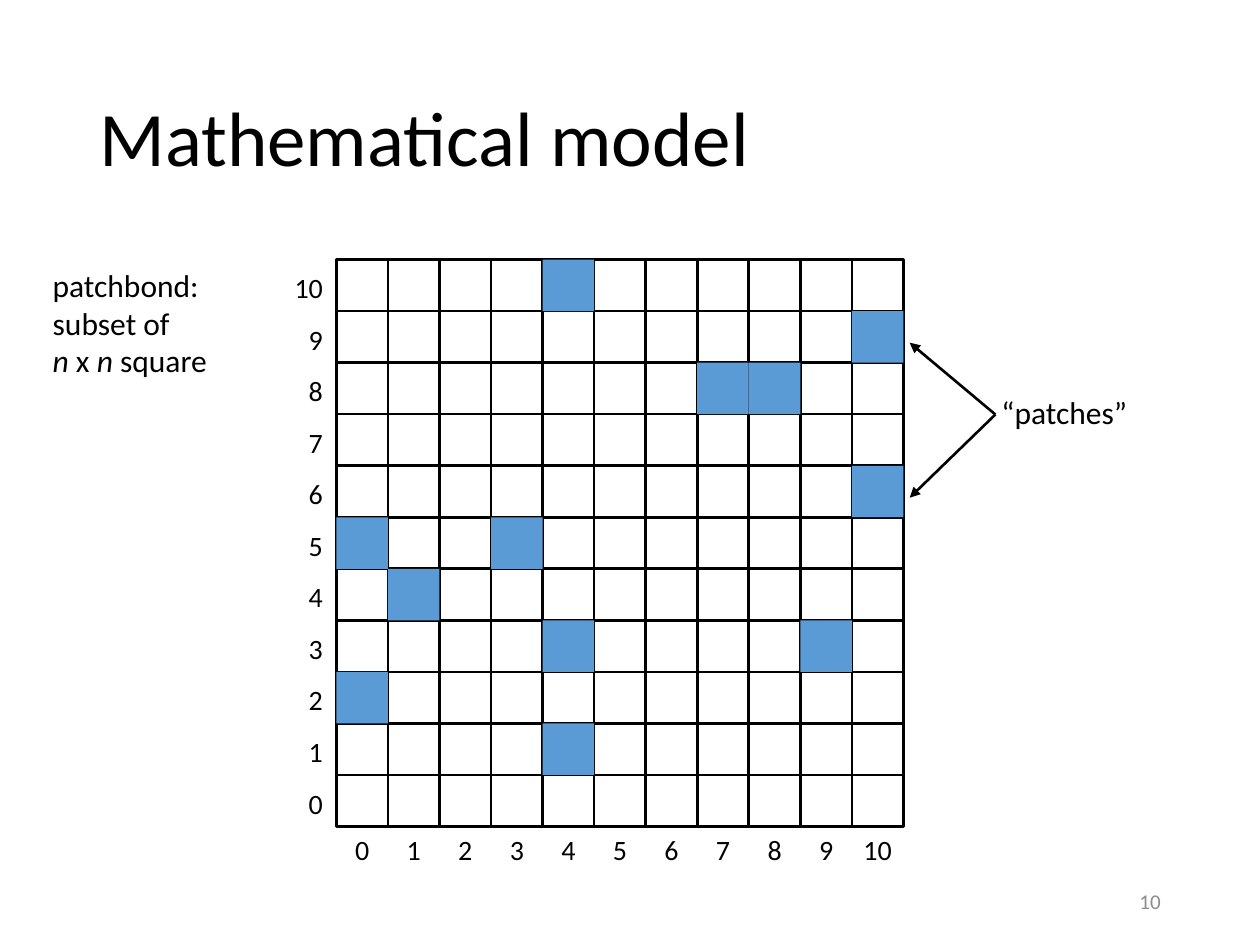
from lxml import etree
from pptx import Presentation
from pptx.dml.color import RGBColor
from pptx.enum.shapes import MSO_CONNECTOR, MSO_SHAPE
from pptx.enum.text import MSO_ANCHOR, PP_ALIGN
from pptx.oxml.ns import qn
from pptx.util import Inches, Pt

STRAIGHT = MSO_CONNECTOR.STRAIGHT
RECTANGLE = MSO_SHAPE.RECTANGLE
TOP, MIDDLE = MSO_ANCHOR.TOP, MSO_ANCHOR.MIDDLE
LEFT, CENTER, RIGHT = PP_ALIGN.LEFT, PP_ALIGN.CENTER, PP_ALIGN.RIGHT

COLORS = {"ink": "000000", "paper": "FFFFFF", "patch": "5B9BD5", "number": "8C8C8C"}

COUNT = 11
SIDE = 4.5
CELL = SIDE / COUNT
GRID_LEFT, GRID_TOP = 2.67, 2.06
GRID_RIGHT, GRID_BOTTOM = GRID_LEFT + SIDE, GRID_TOP + SIDE
LABEL_HEIGHT = 0.37

# (column, row), with rows counted upwards
PATCHES = [(0, 2), (1, 4), (0, 5), (3, 5), (4, 3), (4, 1),
           (4, 10), (7, 8), (8, 8), (9, 3), (10, 9), (10, 6)]


class SlideBuilder:
    """Adds elements in one style to the current slide."""

    font_name = "Calibri"
    line_width = Pt(1.5)

    def __init__(self, slide):
        self.slide = slide

    def format_runs(self, para, size, color):
        for span in para.runs:
            span.font.name = self.font_name
            span.font.size = Pt(size)
            span.font.color.rgb = RGBColor.from_string(COLORS[color])

    def title(self, text, left, top, width, height):
        box = self.slide.shapes.title
        box.left, box.top = Inches(left), Inches(top)
        box.width, box.height = Inches(width), Inches(height)
        box.text_frame.text = text
        box.text_frame.vertical_anchor = MIDDLE
        para = box.text_frame.paragraphs[0]
        para.alignment = LEFT
        para.line_spacing = 0.9
        self.format_runs(para, 44, "ink")

    def text(self, paragraphs, left, top, width, height, size=18, color="ink",
             align=LEFT, anchor=TOP, margins=(0.1, 0.1)):
        """Each paragraph is a list of spans; a span is (text, italic)."""
        box = self.slide.shapes.add_textbox(
            Inches(left), Inches(top), Inches(width), Inches(height))
        frame = box.text_frame
        frame.word_wrap = True
        frame.vertical_anchor = anchor
        frame.margin_left, frame.margin_right = map(Inches, margins)
        for index, spans in enumerate(paragraphs):
            para = frame.add_paragraph() if index else frame.paragraphs[0]
            para.alignment = align
            for words, italic in spans:
                span = para.add_run()
                span.text = words
                span.font.italic = italic
            self.format_runs(para, size, color)

    def label(self, words, *place, **style):
        self.text([[(words, False)]], *place, **style)

    def square(self, left, top, side, fill, outlined=False):
        shape = self.slide.shapes.add_shape(
            RECTANGLE, Inches(left), Inches(top), Inches(side), Inches(side))
        shape.shadow.inherit = False
        shape.fill.solid()
        shape.fill.fore_color.rgb = RGBColor.from_string(COLORS[fill])
        if outlined:
            shape.line.color.rgb = RGBColor.from_string(COLORS["ink"])
            shape.line.width = self.line_width
        else:
            shape.line.fill.background()

    def line(self, start, end, arrow=False):
        connector = self.slide.shapes.add_connector(
            STRAIGHT, *map(Inches, start + end))
        connector.line.color.rgb = RGBColor.from_string(COLORS["ink"])
        connector.line.width = self.line_width
        if arrow:
            stroke = connector.line._get_or_add_ln()
            etree.SubElement(stroke, qn("a:tailEnd"), type="triangle")
        etree.SubElement(connector._element.spPr, qn("a:effectLst"))


def draw_grid(builder):
    builder.square(GRID_LEFT, GRID_TOP, SIDE, "paper", outlined=True)
    for index in range(1, COUNT):
        x, y = GRID_LEFT + index * CELL, GRID_TOP + index * CELL
        builder.line((x, GRID_TOP), (x, GRID_BOTTOM))
        builder.line((GRID_LEFT, y), (GRID_RIGHT, y))


def draw_axis_labels(builder):
    for number in range(COUNT):
        width = 0.29 if number < 10 else 0.42
        center = GRID_LEFT + (number + 0.5) * CELL
        builder.label(str(number), center - width / 2, GRID_BOTTOM, width,
                      LABEL_HEIGHT, size=16, align=CENTER, margins=(0, 0))
    for number in range(COUNT):
        top = GRID_BOTTOM - LABEL_HEIGHT - number * CELL
        builder.label(str(number), 2.24, top, 0.42, LABEL_HEIGHT,
                      size=16, align=RIGHT, margins=(0, 0.1))


def main():
    deck = Presentation()
    deck.slide_width, deck.slide_height = Inches(10), Inches(7.5)
    title_only = deck.slide_layouts[5]
    builder = SlideBuilder(deck.slides.add_slide(title_only))

    builder.title("Mathematical model", 0.69, 0.4, 8.62, 1.45)
    draw_grid(builder)
    draw_axis_labels(builder)
    builder.text([[("patchbond: subset of", False)],
                  [("n ", True), ("x ", False), ("n", True), (" square", False)]],
                 0.32, 2.06, 1.76, 1.01)
    for column, row in PATCHES:
        builder.square(GRID_LEFT + column * CELL,
                       GRID_BOTTOM - (row + 1) * CELL, CELL, "patch")

    builder.label("“patches”", 7.85, 3.07, 1.27, 0.4)
    for target in [(7.22, 3.95), (7.22, 2.72)]:
        builder.line((7.9, 3.29), target, arrow=True)
    builder.label("10", 7.06, 6.95, 2.25, 0.4, size=12, color="number",
                  align=RIGHT, anchor=MIDDLE)
    deck.save("out.pptx")


if __name__ == "__main__":
    main()
